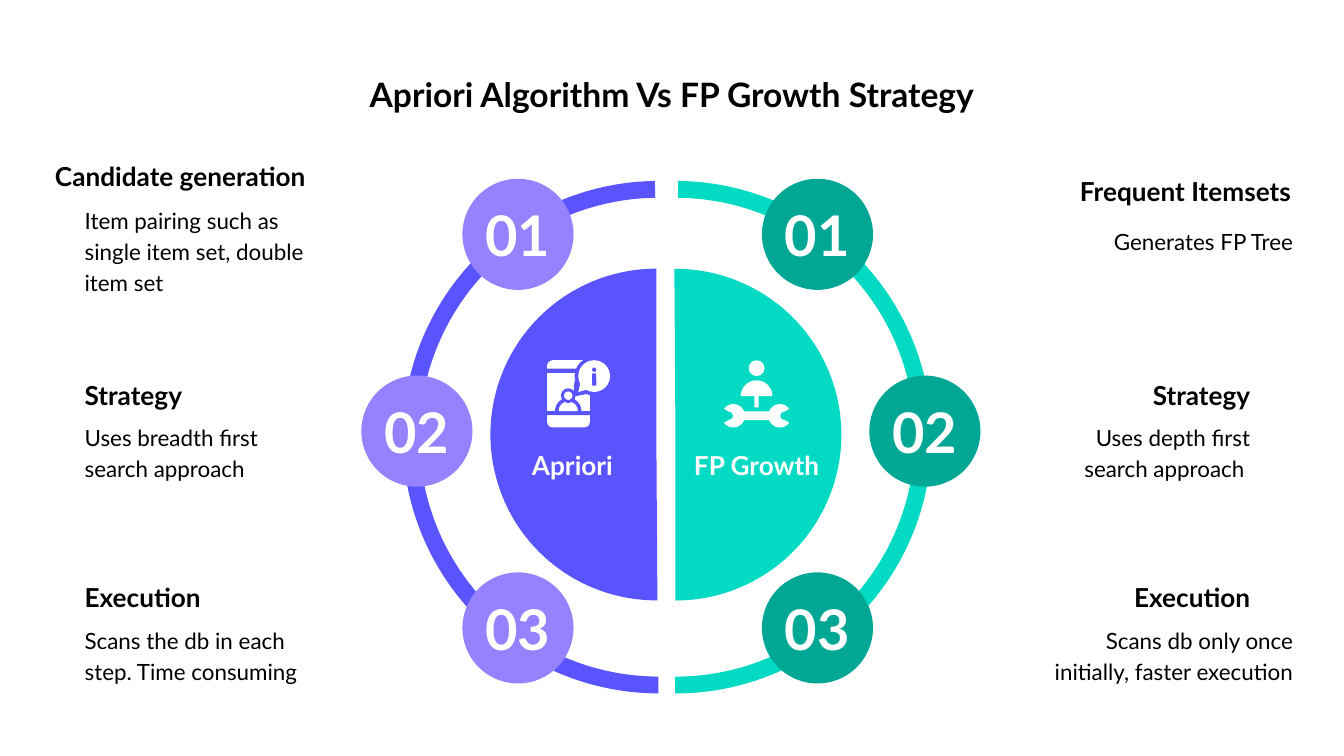
from math import cos, radians, sin

from pptx import Presentation
from pptx.dml.color import RGBColor
from pptx.enum.shapes import MSO_SHAPE
from pptx.enum.text import MSO_ANCHOR, PP_ALIGN
from pptx.util import Cm, Pt

VIOLET = RGBColor(0x5A, 0x54, 0xFF)
LILAC = RGBColor(0x96, 0x82, 0xFF)
TURQUOISE = RGBColor(0x03, 0xDA, 0xC4)
TEAL = RGBColor(0x00, 0xA7, 0x94)
WHITE = RGBColor(0xFF, 0xFF, 0xFF)
BLACK = RGBColor(0, 0, 0)
FONT = "Lato"

# Content; all places are (left, top, width, height) in cm
TITLE = "Apriori Algorithm Vs FP Growth Strategy"
SIDES = [
    {"name": "Apriori", "label_left": 9.27, "align": PP_ALIGN.LEFT,
     "main": VIOLET, "disc": LILAC, "disc_lefts": (8.74, 6.83, 8.74),
     "ring_left": 7.77, "ring_angles": (54.08, 161.46),
     "pie_left": 9.27, "pie_turn": 0,
     "points": [
         ("Candidate generation", (0.79, 2.74, 5.51, 1.19),
          "Item pairing such as single item set, double item set", (1.35, 4.09, 5.31, 1.27)),
         ("Strategy", (1.35, 7.14, 3.28, 0.64),
          "Uses breadth first search approach", (1.35, 7.9, 4.7, 1.27)),
         ("Execution", (1.35, 10.97, 3.28, 0.64),
          "Scans the db in each step. Time consuming", (1.35, 11.73, 4.7, 1.27))]},
    {"name": "FP Growth", "label_left": 12.75, "align": PP_ALIGN.RIGHT,
     "main": TURQUOISE, "disc": TEAL, "disc_lefts": (14.4, 16.43, 14.4),
     "ring_left": 8.08, "ring_angles": (162.37, 54.02),
     "pie_left": 9.63, "pie_turn": 180,
     "points": [
         ("Frequent Itemsets ", (19.66, 3.3, 5.11, 0.64),
          "Generates FP Tree", (19.99, 3.94, 4.7, 1.19)),
         ("Strategy", (20.6, 7.14, 3.28, 0.64),
          "Uses depth first search approach ", (19.18, 7.9, 4.7, 1.27)),
         ("Execution", (20.6, 10.97, 3.28, 0.64),
          "Scans db only once initially, faster execution", (19.18, 11.73, 5.51, 1.27))]},
]
DISC_TOP, DISC_STEP, DISC_SIZE = 3.38, 3.72, 2.1

deck = Presentation()
deck.slide_width, deck.slide_height = Cm(25.4), Cm(14.29)
page = deck.slides.add_slide(deck.slide_layouts[6])


def write(frame, text, size=12, bold=False, color=BLACK, align=PP_ALIGN.LEFT,
          anchor=MSO_ANCHOR.MIDDLE, spacing=None, margin=0.25):
    frame.word_wrap = True
    frame.vertical_anchor = anchor
    frame.margin_left = frame.margin_right = Cm(margin)
    frame.margin_top = frame.margin_bottom = Cm(margin)
    para = frame.paragraphs[0]
    para.alignment = align
    if spacing:
        para.line_spacing = spacing
    span = para.add_run()
    span.text = text
    span.font.name, span.font.size, span.font.bold = FONT, Pt(size), bold
    span.font.color.rgb = color


def add_text(place, text, **style):
    box = page.shapes.add_textbox(*map(Cm, place))
    write(box.text_frame, text, **style)


def paint(shape, color):
    shape.shadow.inherit = False
    shape.fill.solid()
    shape.fill.fore_color.rgb = color
    shape.line.fill.background()
    return shape


def add_shape(kind, place, color):
    return paint(page.shapes.add_shape(kind, *map(Cm, place)), color)


def circle(x, y, radius, color):
    return add_shape(MSO_SHAPE.OVAL, (x - radius, y - radius, 2 * radius, 2 * radius), color)


def curve(x, y, radius, start, end, steps=16):
    angles = [radians(start + (end - start) * i / steps) for i in range(steps + 1)]
    return [(x + radius * cos(a), y + radius * sin(a)) for a in angles]


def outline(points, color):
    points = [(Cm(x), Cm(y)) for x, y in points]
    builder = page.shapes.build_freeform(*points[0], scale=1.0)
    builder.add_line_segments(points[1:], close=True)
    paint(builder.convert_to_shape(), color)


def half_disc(x, y, radius, color):
    outline(curve(x, y, radius, 180, 360), color)


# Rings and numbered discs
for side in SIDES:
    ring = page.shapes.add_shape(MSO_SHAPE.ARC, Cm(side["ring_left"]), Cm(3.58), Cm(9.37), Cm(9.37))
    ring.shadow.inherit = False
    ring.fill.background()
    ring.line.color.rgb, ring.line.width = side["main"], Pt(9)
    ring.adjustments[0], ring.adjustments[1] = side["ring_angles"]
    for i, left in enumerate(side["disc_lefts"]):
        place = (left, DISC_TOP + i * DISC_STEP, DISC_SIZE, DISC_SIZE)
        disc = add_shape(MSO_SHAPE.OVAL, place, side["disc"])
        write(disc.text_frame, f"{i + 1:02}", size=30, bold=True, color=WHITE,
              align=PP_ALIGN.CENTER, margin=0)

# Title and the points on each side
add_text((1.27, 1.14, 22.86, 1.35), TITLE, size=18, bold=True,
         align=PP_ALIGN.CENTER, anchor=MSO_ANCHOR.TOP)
for side in SIDES:
    for heading, heading_place, body, body_place in side["points"]:
        add_text(body_place, body, align=side["align"], spacing=1.15)
        add_text(heading_place, heading, size=14, bold=True, align=side["align"])

# Half circles with their labels
for side in SIDES:
    pie = add_shape(MSO_SHAPE.PIE, (side["pie_left"], 5.08, 6.27, 6.27), side["main"])
    pie.adjustments[0], pie.adjustments[1] = 53.77, 162
    pie.rotation = side["pie_turn"]
for side in SIDES:
    add_text((side["label_left"], 8.48, 3.1, 0.64), side["name"], size=14, bold=True,
             color=WHITE, align=PP_ALIGN.CENTER)

# Phone icon: body, gaps, user and speech bubble
phone = add_shape(MSO_SHAPE.ROUNDED_RECTANGLE, (10.34, 6.81, 0.81, 1.27), WHITE)
phone.adjustments[0] = 0.13
for top in (6.97, 7.77):
    add_shape(MSO_SHAPE.RECTANGLE, (10.34, top, 0.81, 0.08), VIOLET)
half_disc(10.74, 7.77, 0.25, VIOLET)
half_disc(10.74, 7.77, 0.18, WHITE)
circle(11.23, 7.11, 0.37, VIOLET)
outline([(10.86, 7.2), (10.83, 7.5), (11.12, 7.44)], VIOLET)
circle(10.74, 7.48, 0.14, VIOLET)
circle(10.74, 7.48, 0.08, WHITE)
circle(11.23, 7.11, 0.3, WHITE)
outline([(10.97, 7.24), (10.93, 7.41), (11.08, 7.37)], WHITE)
circle(11.23, 6.99, 0.04, VIOLET)
add_shape(MSO_SHAPE.ROUNDED_RECTANGLE, (11.19, 7.06, 0.08, 0.23), VIOLET)

# Worker icon: user on a double-ended wrench
AXIS, WRENCH_Y = 14.3, 7.86
circle(AXIS, 6.96, 0.15, WHITE)
half_disc(AXIS, 7.49, 0.3, WHITE)
add_shape(MSO_SHAPE.RECTANGLE, (AXIS - 0.04, 7.48, 0.08, 0.22), WHITE)
wrench_head = (curve(13.86, WRENCH_Y, 0.22, -22, -143)
               + curve(13.77, WRENCH_Y, 0.08, -90, 90)
               + curve(13.86, WRENCH_Y, 0.22, 143, 22))
mirrored_head = [(2 * AXIS - x, y) for x, y in reversed(wrench_head)]
outline(wrench_head + mirrored_head, WHITE)

deck.save("out.pptx")
